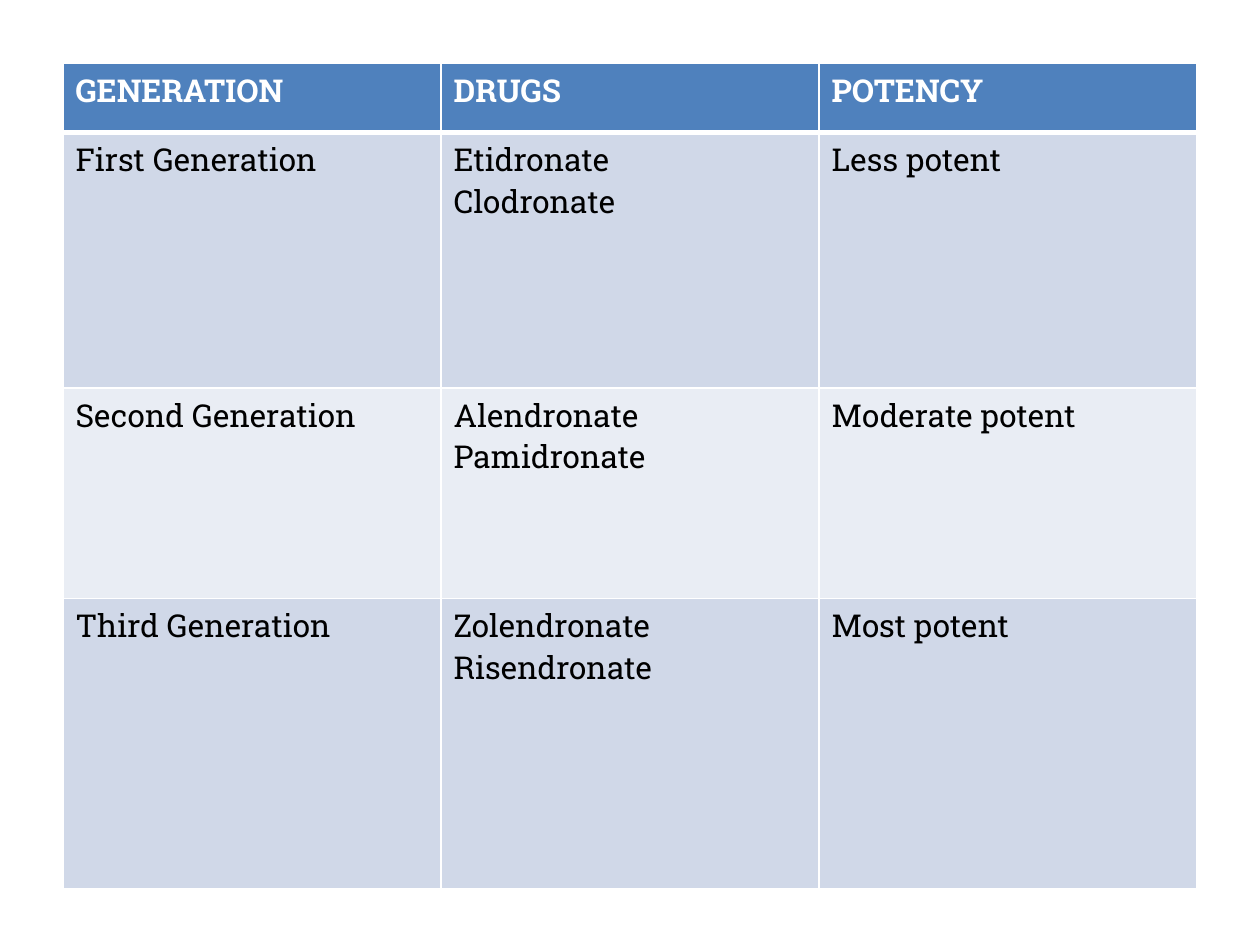
from lxml.etree import SubElement
from pptx import Presentation
from pptx.dml.color import RGBColor
from pptx.oxml.ns import qn
from pptx.util import Inches, Pt


def colour(code):
    return RGBColor.from_string(code)


def write(cell, text, size=18, font="Roboto Slab", ink="000000", bold=False):
    cell.text = text
    for paragraph in cell.text_frame.paragraphs:
        for run in paragraph.runs:
            run.font.size = Pt(size)
            run.font.name = font
            run.font.bold = bold
            run.font.color.rgb = colour(ink)


HEADER, BANDS, RULE = "4F81BD", ("E9EDF4", "D0D8E8"), "FFFFFF"
row_heights = [0.55, 2.03, 1.67, 2.3]
generations = [
    ("GENERATION", "DRUGS", "POTENCY"),
    ("First Generation", "Etidronate\nClodronate", "Less potent"),
    ("Second Generation", "Alendronate\nPamidronate", "Moderate potent"),
    ("Third Generation", "Zolendronate\nRisendronate", "Most potent"),
]

deck = Presentation()
deck.slide_width, deck.slide_height = Inches(10), Inches(7.5)
slide = deck.slides.add_slide(deck.slide_layouts[6])

margin = deck.slide_width // 20
potency_table = slide.shapes.add_table(
    len(generations), len(generations[0]), margin, margin,
    deck.slide_width - 2 * margin, Inches(sum(row_heights))).table

for row, (height, entries) in enumerate(zip(row_heights, generations)):
    potency_table.rows[row].height = Inches(height)
    is_header = row == 0
    for column, entry in enumerate(entries):
        cell = potency_table.cell(row, column)
        write(cell, entry, bold=is_header, ink="FFFFFF" if is_header else "000000")
        widths = {"L": 1, "R": 1, "T": 3 if row == 1 else 1, "B": 3 if is_header else 1}
        properties = cell._tc.get_or_add_tcPr()
        for side, width in widths.items():
            border = SubElement(properties, qn(f"a:ln{side}"), w=str(Pt(width)))
            SubElement(SubElement(border, qn("a:solidFill")), qn("a:srgbClr"), val=RULE)
        cell.fill.solid()
        cell.fill.fore_color.rgb = colour(HEADER if is_header else BANDS[row % 2])

deck.save("out.pptx")
